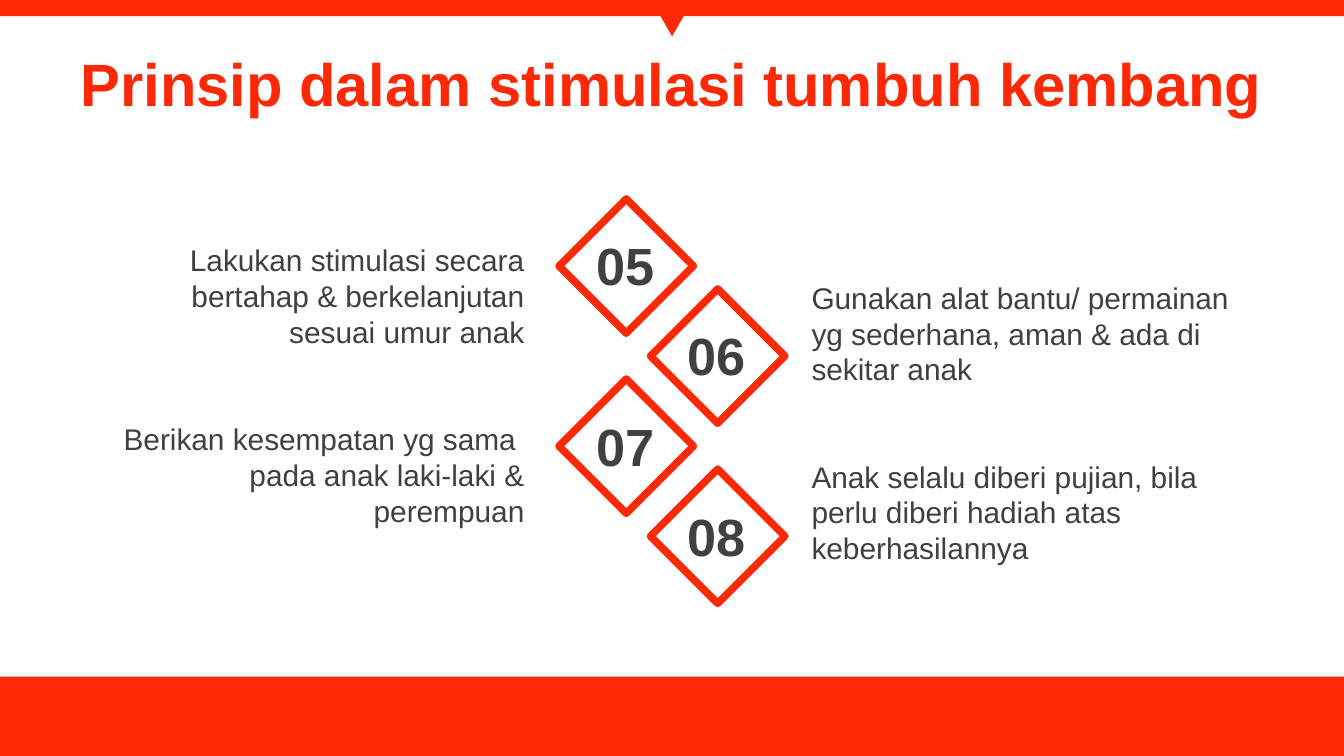
from lxml import etree
from pptx import Presentation, util as u
from pptx.dml.color import RGBColor
from pptx.enum import shapes, text
from pptx.oxml import ns

RED = RGBColor(0xFD, 0x29, 0x06)
GRAY = RGBColor(0x40, 0x40, 0x40)
WIDTH = 10
HEIGHT = WIDTH * 9 / 16
FOOTER_HEIGHT = 0.59

TITLE = "Prinsip dalam stimulasi tumbuh kembang"
PRINCIPLES = [
    ("05", "Lakukan stimulasi secara bertahap & berkelanjutan sesuai umur anak"),
    ("06", "Gunakan alat bantu/ permainan yg sederhana, aman & ada di sekitar anak"),
    ("07", "Berikan kesempatan yg sama  pada anak laki-laki & perempuan"),
    ("08", "Anak selalu diberi pujian, bila perlu diberi hadiah atas keberhasilannya"),
]


def write_text(frame, content, *, size, color=GRAY, bold=False,
               align=text.PP_ALIGN.LEFT, anchor=text.MSO_ANCHOR.TOP, wrap=True):
    frame.word_wrap = wrap
    frame.vertical_anchor = anchor
    paragraph = frame.paragraphs[0]
    paragraph.alignment = align
    run = paragraph.add_run()
    run.text = content
    run.font.name = "Arial"
    run.font.size = u.Pt(size)
    run.font.bold = bold
    run.font.color.rgb = color


class SlideBuilder:
    def __init__(self, slide, accent=RED):
        self.slide = slide
        self.accent = accent

    def add_shape(self, kind, left, top, width, height):
        shape = self.slide.shapes.add_shape(
            kind, u.Inches(left), u.Inches(top), u.Inches(width), u.Inches(height))
        shape.shadow.inherit = False
        return shape

    def add_solid(self, kind, left, top, width, height, rotation=0):
        shape = self.add_shape(kind, left, top, width, height)
        shape.fill.solid()
        shape.fill.fore_color.rgb = self.accent
        shape.line.fill.background()
        shape.rotation = rotation

    def add_diamond(self, left, top, size):
        """Draw an unfilled diamond whose outline has rounded corners."""
        shape = self.add_shape(shapes.MSO_SHAPE.DIAMOND, left, top, size, size)
        shape.fill.background()
        shape.line.color.rgb = self.accent
        shape.line.width = u.Pt(4)
        outline = shape.element.spPr.find(ns.qn("a:ln"))
        etree.SubElement(outline, ns.qn("a:round"))

    def add_text(self, content, left, top, width, height, **style):
        box = self.slide.shapes.add_textbox(
            u.Inches(left), u.Inches(top), u.Inches(width), u.Inches(height))
        write_text(box.text_frame, content, **style)


def main():
    presentation = Presentation()
    presentation.slide_width = u.Inches(WIDTH)
    presentation.slide_height = u.Inches(HEIGHT)
    builder = SlideBuilder(presentation.slides.add_slide(presentation.slide_layouts[6]))

    builder.add_solid(shapes.MSO_SHAPE.RECTANGLE, 0, HEIGHT - FOOTER_HEIGHT, WIDTH, FOOTER_HEIGHT)
    builder.add_solid(shapes.MSO_SHAPE.RECTANGLE, 0, 0, WIDTH, 0.12)
    builder.add_solid(shapes.MSO_SHAPE.ISOSCELES_TRIANGLE, (WIDTH - 0.31) / 2, 0, 0.31, 0.27,
                      rotation=180)
    builder.add_text(TITLE, 0, 0.13, WIDTH, 0.97, size=32, color=RED, bold=True,
                     align=text.PP_ALIGN.CENTER, anchor=text.MSO_ANCHOR.MIDDLE)

    # Odd numbers step down on the left, even numbers on the right.
    columns = [
        (4.16, 0.74, 3.26, 1.75, text.PP_ALIGN.RIGHT),
        (4.84, 5.94, 3.46, 2.03, text.PP_ALIGN.LEFT),
    ]
    step = 0.67
    for index, (number, principle) in enumerate(PRINCIPLES):
        row, side = divmod(index, 2)
        diamond_left, text_left, text_width, text_top, align = columns[side]
        diamond_top = 1.48 + index * step
        builder.add_diamond(diamond_left, diamond_top, 1)
        builder.add_text(number, diamond_left + 0.18, diamond_top + 0.21, 0.64, 0.57,
                         size=28, bold=True, wrap=False)
        builder.add_text(principle, text_left, text_top + row * 1.33,
                         text_width, 0.91, size=16, align=align)

    presentation.save("out.pptx")


if __name__ == "__main__":
    main()
